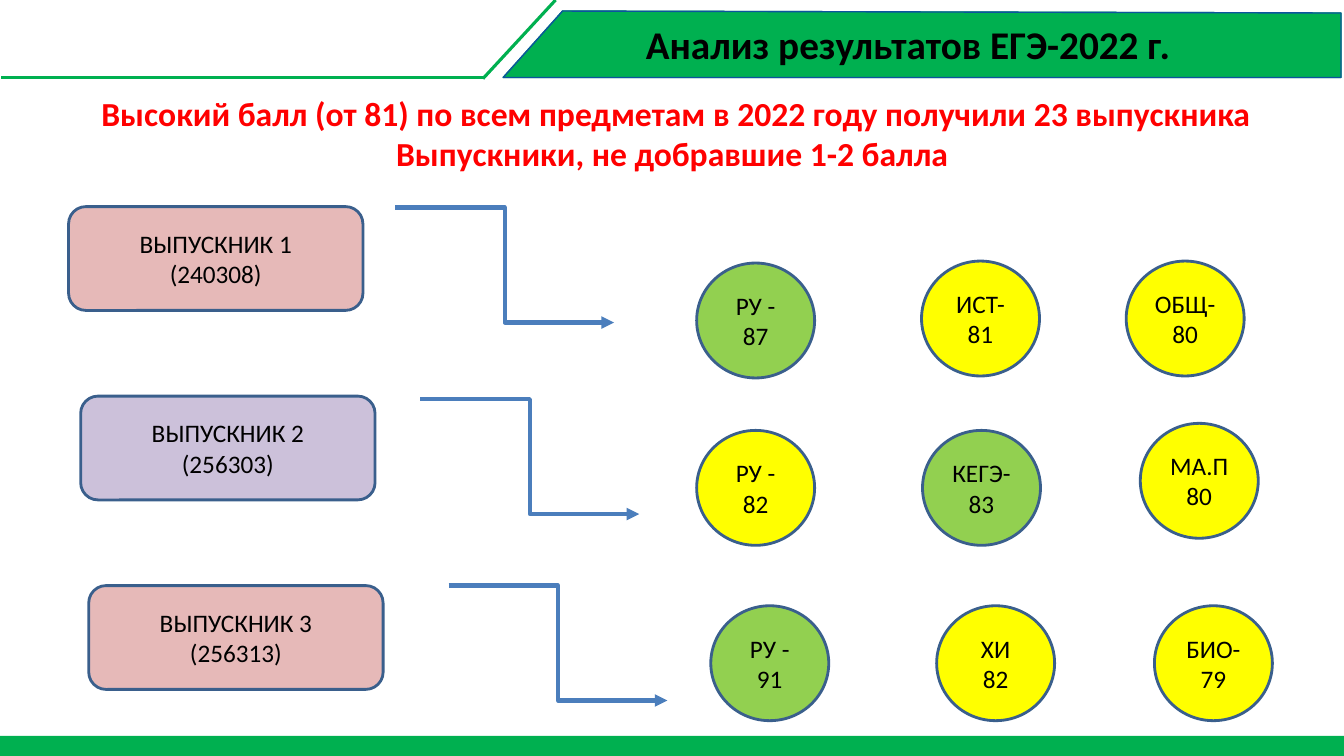
from dataclasses import dataclass

import pptx
import pptx.dml.color
import pptx.enum.shapes
import pptx.enum.text
import pptx.oxml
import pptx.oxml.ns
import pptx.util
from pptx.util import Inches

SHAPE = pptx.enum.shapes.MSO_SHAPE
CONNECTOR = pptx.enum.shapes.MSO_CONNECTOR
FONT = "Calibri"
COLORS = {
    "green": "00B050", "outline": "0C549E", "black": "000000", "red": "FF0000",
    "pink": "E6B9B8", "lilac": "CCC1DA", "border": "3A5F8C", "arrow": "4B7EBC",
    "lime": "92D050", "yellow": "FFFF00",
}
CARD_SIZE = (2.92, 1.03)
SCORE_SIZE = (1.17, 1.14)
ARROW_SIZE = (2.17, 1.14)


@dataclass
class Score:
    x: float
    y: float
    lines: list[str]
    fill: str = "yellow"


@dataclass
class Graduate:
    x: float
    y: float
    lines: list[str]
    fill: str
    arrow: tuple[float, float]
    scores: list[Score]


@dataclass
class Outline:
    points: list[tuple[float, float]]
    line: str
    width: float
    fill: str | None = None
    close: bool = False


BANNER = [(5.58, 0.11), (13.3, 0.13), (13.3, 0.77), (4.99, 0.77)]
OUTLINES = [
    Outline(BANNER, "green", 1, "green", True),
    Outline(BANNER, "outline", 1, close=True),
    Outline([(5.51, 0), (4.79, 0.78)], "green", 2.25),
]
GRADUATES = [
    Graduate(0.68, 2.05, ["ВЫПУСКНИК 1", "(240308)"], "pink", (3.92, 2.06), [
        Score(6.91, 2.61, ["РУ - 87"], "lime"),
        Score(9.14, 2.59, ["ИСТ-", "81"]),
        Score(11.17, 2.59, ["ОБЩ-", "80"])]),
    Graduate(0.8, 3.93, ["ВЫПУСКНИК 2", "(256303)"], "lilac", (4.17, 3.96), [
        Score(6.91, 4.27, ["РУ - 82"]),
        Score(9.15, 4.27, ["КЕГЭ-", "83"], "lime"),
        Score(11.31, 4.2, ["МА.П", "80"])]),
    Graduate(0.88, 5.81, ["ВЫПУСКНИК 3", "(256313)"], "pink", (4.45, 5.81), [
        Score(7.05, 6.01, ["РУ - 91"], "lime"),
        Score(9.29, 6.01, ["ХИ", "82"]),
        Score(11.45, 6.01, ["БИО-", "79"])]),
]


def rgb(name: str) -> pptx.dml.color.RGBColor:
    return pptx.dml.color.RGBColor.from_string(COLORS[name])


def set_text(tf, lines: list[str], *, size: float = 18, color: str = "black",
             bold: bool = False) -> None:
    tf.word_wrap = True
    for i, line in enumerate(lines):
        p = tf.paragraphs[0] if i == 0 else tf.add_paragraph()
        p.alignment = pptx.enum.text.PP_ALIGN.CENTER
        r = p.add_run()
        r.text = line
        r.font.name = FONT
        r.font.size = pptx.util.Pt(size)
        r.font.bold = bold
        r.font.color.rgb = rgb(color)


def style(sp, fill: str | None, line: str | None, width: float = 2) -> None:
    sp.shadow.inherit = False
    if fill:
        sp.fill.solid()
        sp.fill.fore_color.rgb = rgb(fill)
    else:
        sp.fill.background()
    if line:
        sp.line.color.rgb = rgb(line)
        sp.line.width = pptx.util.Pt(width)
    else:
        sp.line.fill.background()


def add_outline(s, item: Outline) -> None:
    points = [(Inches(x), Inches(y)) for x, y in item.points]
    builder = s.shapes.build_freeform(*points[0])
    builder.add_line_segments(points[1:], close=item.close)
    style(builder.convert_to_shape(), item.fill, item.line, item.width)


def add_label(s, kind, x: float, y: float, size: tuple[float, float],
              lines: list[str], fill: str) -> None:
    sp = s.shapes.add_shape(kind, Inches(x), Inches(y), *map(Inches, size))
    style(sp, fill, "border")
    sp.text_frame.vertical_anchor = pptx.enum.text.MSO_ANCHOR.MIDDLE
    set_text(sp.text_frame, lines)


def add_line(s, kind, start: tuple[float, float], end: tuple[float, float],
             color: str, width: float, arrow: bool = False) -> None:
    line = s.shapes.add_connector(kind, *map(Inches, start + end))
    line.line.color.rgb = rgb(color)
    line.line.width = pptx.util.Pt(width)
    if arrow:
        head = pptx.oxml.parse_xml(
            f'<a:tailEnd {pptx.oxml.ns.nsdecls("a")} type="triangle"/>')
        line.line._get_or_add_ln().append(head)
    line._element.spPr.append(
        pptx.oxml.parse_xml(f'<a:effectLst {pptx.oxml.ns.nsdecls("a")}/>'))


def add_heading(s, box: tuple[float, float, float, float], lines: list[str],
                size: float, color: str) -> None:
    tf = s.shapes.add_textbox(*map(Inches, box)).text_frame
    set_text(tf, lines, size=size, color=color, bold=True)
    tf.auto_size = pptx.enum.text.MSO_AUTO_SIZE.SHAPE_TO_FIT_TEXT


def main() -> None:
    prs = pptx.Presentation()
    prs.slide_width, prs.slide_height = Inches(13.33), Inches(7.5)
    s = prs.slides.add_slide(prs.slide_layouts[6])

    # Banner and footer
    for item in OUTLINES:
        add_outline(s, item)
    add_line(s, CONNECTOR.STRAIGHT, (4.8, 0.77), (0.01, 0.77), "green", 2.25)
    footer = s.shapes.add_shape(SHAPE.RECTANGLE, 0, Inches(7.3),
                                prs.slide_width, Inches(0.2))
    style(footer, "green", None)

    # Headings
    add_heading(s, (5.67, 0.15, 6.67, 0.57),
                ["Анализ результатов ЕГЭ-2022 г."], 28, "black")
    add_heading(s, (0.8, 0.87, 11.81, 0.91), [
        "Высокий балл (от 81) по всем предметам в 2022 году получили 23 выпускника",
        "Выпускники, не добравшие 1-2 балла "], 24, "red")

    # Graduates, arrows and scores
    for g in GRADUATES:
        add_label(s, SHAPE.ROUNDED_RECTANGLE, g.x, g.y, CARD_SIZE, g.lines, g.fill)
        x, y = g.arrow
        end = (x + ARROW_SIZE[0], y + ARROW_SIZE[1])
        add_line(s, CONNECTOR.ELBOW, g.arrow, end, "arrow", 3, arrow=True)
        for score in g.scores:
            add_label(s, SHAPE.OVAL, score.x, score.y, SCORE_SIZE,
                      score.lines, score.fill)

    prs.save("out.pptx")


if __name__ == "__main__":
    main()
